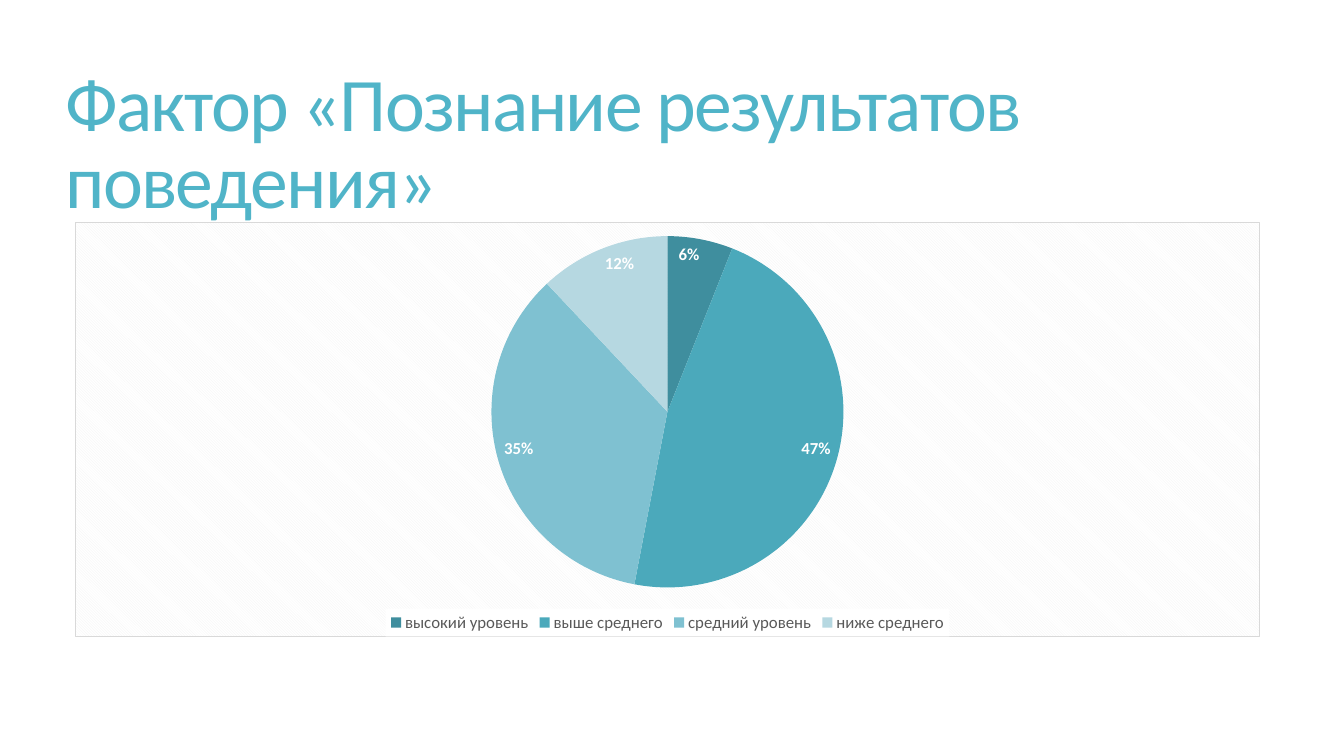
"""Build a slide with a titled pie chart of factor levels."""
from lxml import etree
from pptx import Presentation
from pptx.chart.data import CategoryChartData
from pptx.dml.color import RGBColor
from pptx.enum.chart import XL_CHART_TYPE as Kind, XL_LABEL_POSITION as Place, XL_LEGEND_POSITION as Side
from pptx.enum.text import MSO_ANCHOR as Anchor
from pptx.oxml import parse_xml
from pptx.oxml.ns import nsdecls, qn
from pptx.util import Inches, Pt

TITLE = "Фактор «Познание результатов поведения»"
LEVELS = [
    ("высокий уровень", 6, RGBColor(0x3F, 0x8E, 0x9E)),
    ("выше среднего", 47, RGBColor(0x4B, 0xA9, 0xBB)),
    ("средний уровень", 35, RGBColor(0x7F, 0xC1, 0xD1)),
    ("ниже среднего", 12, RGBColor(0xB6, 0xD8, 0xE1)),
]
TITLE_BOX = (0.55, 0.55, 12.42, 1.81)
CHART_BOX = (0.74, 2.2, 11.76, 4.12)
FONT = "Calibri"
TEAL = RGBColor(0x50, 0xB4, 0xC8)
GRAY = RGBColor(0x59, 0x59, 0x59)
BLACK = RGBColor(0, 0, 0)
WHITE = RGBColor(0xFF, 0xFF, 0xFF)
PALE = RGBColor(0xF2, 0xF2, 0xF2)
EDGE = RGBColor(0xD9, 0xD9, 0xD9)


def style(font, size, color, bold=False):
    font.name, font.size, font.bold = FONT, Pt(size), bold
    font.color.rgb = color


def add_title(slide):
    frame = slide.shapes.add_textbox(*map(Inches, TITLE_BOX)).text_frame
    frame.word_wrap = True
    frame.vertical_anchor = Anchor.MIDDLE
    para = frame.paragraphs[0]
    para.line_spacing = 0.85
    run = para.add_run()
    run.text = TITLE
    style(para.font, 54, TEAL)
    run.font.language_id = None
    run.font._element.set("spc", "-120")


def set_area(owner, inner):
    area = parse_xml(f'<c:spPr {nsdecls("c", "a")}>{inner}</c:spPr>')
    owner.find(qn("c:txPr")).addprevious(area)


def add_pie(slide):
    data = CategoryChartData(number_format="0")
    data.categories = [name for name, _, _ in LEVELS]
    data.add_series("Series 1", [value for _, value, _ in LEVELS])
    chart = slide.shapes.add_chart(Kind.PIE, *map(Inches, CHART_BOX), data).chart
    chart.has_title = False
    style(chart.font, 10, BLACK)
    set_area(chart.element, f'''<a:pattFill prst="dkDnDiag">
        <a:fgClr><a:srgbClr val="{PALE}"/></a:fgClr>
        <a:bgClr><a:srgbClr val="{WHITE}"/></a:bgClr></a:pattFill>
        <a:ln w="{Pt(0.75)}"><a:solidFill><a:srgbClr val="{EDGE}"/></a:solidFill></a:ln>''')

    chart.has_legend = True
    legend = chart.legend
    legend.position = Side.BOTTOM
    legend.include_in_layout = False
    style(legend.font, 12, GRAY)
    set_area(legend._element, f'<a:solidFill><a:srgbClr val="{WHITE}"/></a:solidFill>')

    plot = chart.plots[0]
    plot.vary_by_categories = True
    series = plot.series[0]
    for i, (_, _, color) in enumerate(LEVELS):
        fill = series.points[i].format.fill
        fill.solid()
        fill.fore_color.rgb = color
    labels = series.data_labels
    labels.show_percentage = True
    labels.show_value = False
    labels.number_format = "0%"
    labels.number_format_is_linked = False
    labels.position = Place.INSIDE_END
    style(labels.font, 12, WHITE, True)


def main():
    deck = Presentation()
    deck.slide_width, deck.slide_height = Inches(13.33), Inches(7.5)
    slide = deck.slides.add_slide(deck.slide_layouts[6])
    add_title(slide)
    add_pie(slide)
    deck.save("out.pptx")


if __name__ == "__main__":
    main()
